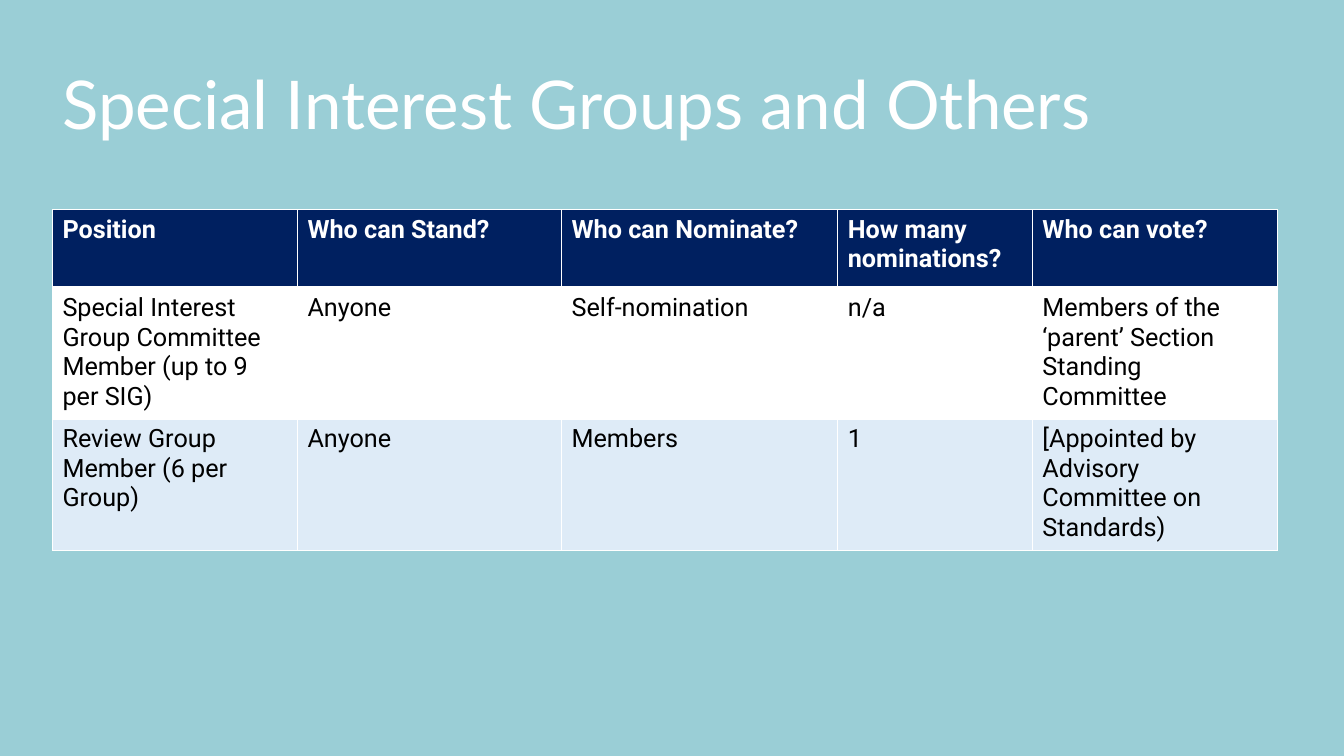
from lxml import etree
from pptx import Presentation
from pptx import util as u
from pptx.dml.color import RGBColor
from pptx.enum import text
from pptx.oxml.ns import qn

WIDTH, HEIGHT = 13.33, 7.5
HEADER = ["Position", "Who can Stand?", "Who can Nominate?",
          "How many nominations?", "Who can vote?"]
POSITIONS = [
    ["Special Interest Group Committee Member (up to 9 per SIG)", "Anyone",
     "Self-nomination", "n/a",
     "Members of the ‘parent’ Section Standing Committee"],
    ["Review Group Member (6 per Group)", "Anyone", "Members", "1",
     "[Appointed by Advisory Committee on Standards)"],
]
COLUMN_WIDTHS = [2.43, 2.62, 2.74, 1.93, 2.43]
ROW_HEIGHTS = [0.78, 1.3, 1.3]


def color(value):
    return RGBColor.from_string(value)


class Page:
    title_font, body_font = "Lato", "Roboto"
    white, black, navy, pale, sea = "FFFFFF", "000000", "002060", "DEEBF7", "9ACED6"

    def __init__(self, deck):
        self.deck = deck
        self.slide = deck.slides.add_slide(deck.slide_layouts[6])
        fill = self.slide.background.fill
        fill.solid()
        fill.fore_color.rgb = color(self.sea)

    def area(self, left, top, width, height):
        """Turn shares of the slide's size into lengths."""
        across, down = self.deck.slide_width, self.deck.slide_height
        return [round(share * size) for share, size in
                zip((left, top, width, height), (across, down, across, down))]

    def set_text(self, frame, words, name, size, ink, bold=False):
        frame.word_wrap = True
        para = frame.paragraphs[0]
        para.text = words
        font = para.font
        font.name, font.size, font.bold = name, u.Pt(size), bold
        font.color.rgb = color(ink)

    def title(self, words, *shares):
        box = self.slide.shapes.add_textbox(*self.area(*shares))
        box.text_frame.vertical_anchor = text.MSO_ANCHOR.TOP
        self.set_text(box.text_frame, words, self.title_font, 48, self.white)

    def border(self, cell, bottom):
        """Rule all four sides in white; bottom is the lower line's width."""
        properties = cell._tc.get_or_add_tcPr()
        sides = {"lnL": 1, "lnR": 1, "lnT": 1, "lnB": bottom}
        for index, (side, points) in enumerate(sides.items()):
            line = etree.Element(qn("a:" + side), w=str(u.Pt(points)))
            fill = etree.SubElement(line, qn("a:solidFill"))
            etree.SubElement(fill, qn("a:srgbClr"), val=self.white)
            properties.insert(index, line)

    def table(self, rows, widths, heights, *shares):
        frame = self.slide.shapes.add_table(len(rows), len(widths), *self.area(*shares))
        table = frame.table
        for column, width in zip(table.columns, widths):
            column.width = u.Inches(width)
        for row, height in zip(table.rows, heights):
            row.height = u.Inches(height)
        fills = [self.navy, self.white, self.pale]
        for index, (row, words) in enumerate(zip(table.rows, rows)):
            is_header = index == 0
            for cell, entry in zip(row.cells, words):
                cell.fill.solid()
                cell.fill.fore_color.rgb = color(fills[index])
                self.border(cell, bottom=3 if is_header else 1)
                self.set_text(cell.text_frame, entry, self.body_font, 18,
                              self.white if is_header else self.black, is_header)


def main():
    deck = Presentation()
    deck.slide_width, deck.slide_height = u.Inches(WIDTH), u.Inches(HEIGHT)
    page = Page(deck)
    left = 0.52 / WIDTH
    page.title("Special Interest Groups and Others",
               left, 0.57 / HEIGHT, 12.3 / WIDTH, 1.85 / HEIGHT)
    page.table([HEADER] + POSITIONS, COLUMN_WIDTHS, ROW_HEIGHTS,
               left, 2.08 / HEIGHT, sum(COLUMN_WIDTHS) / WIDTH,
               sum(ROW_HEIGHTS) / HEIGHT)
    deck.save("out.pptx")


if __name__ == "__main__":
    main()
